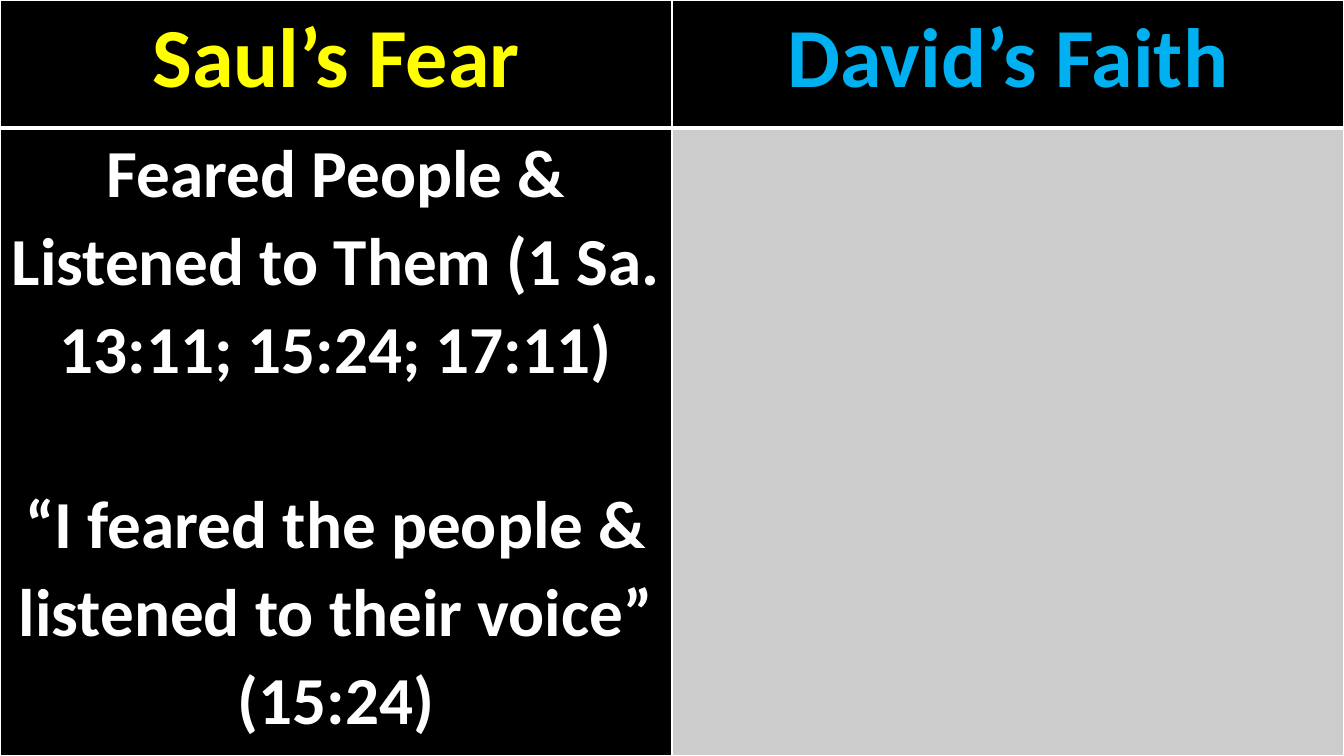
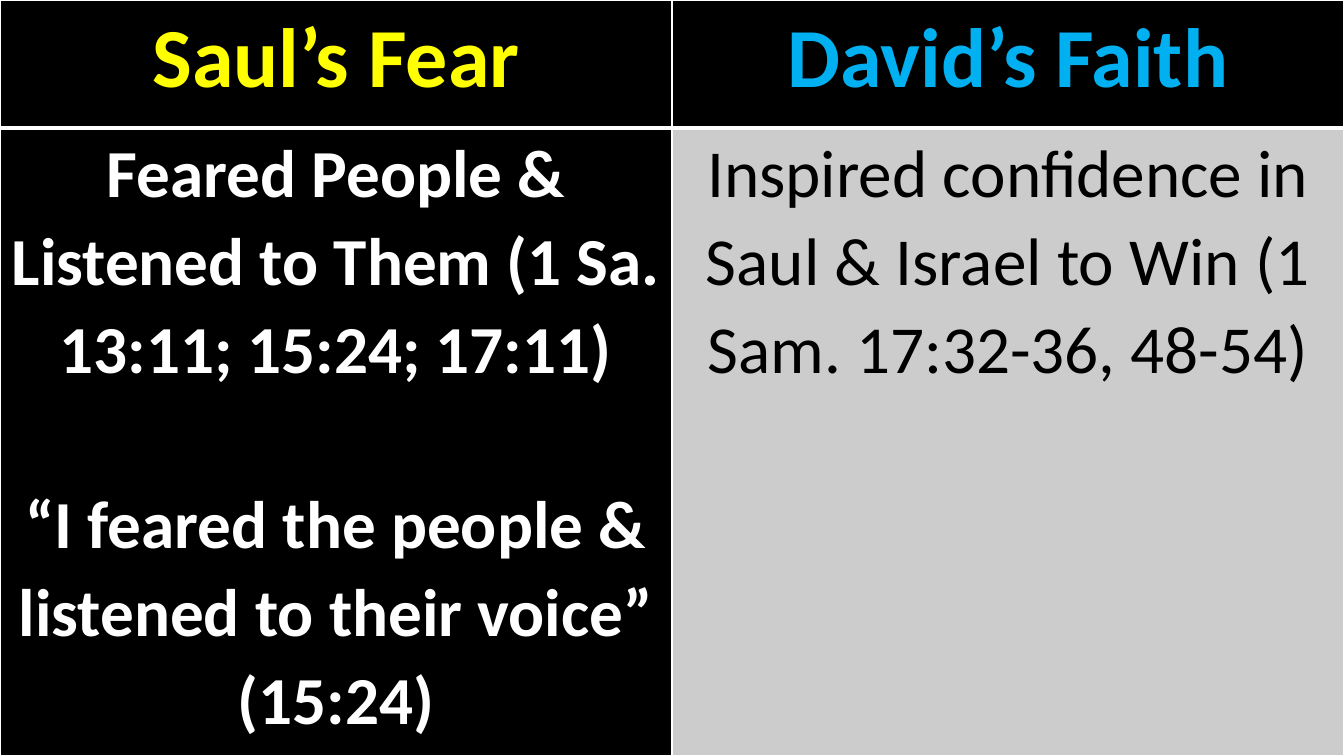
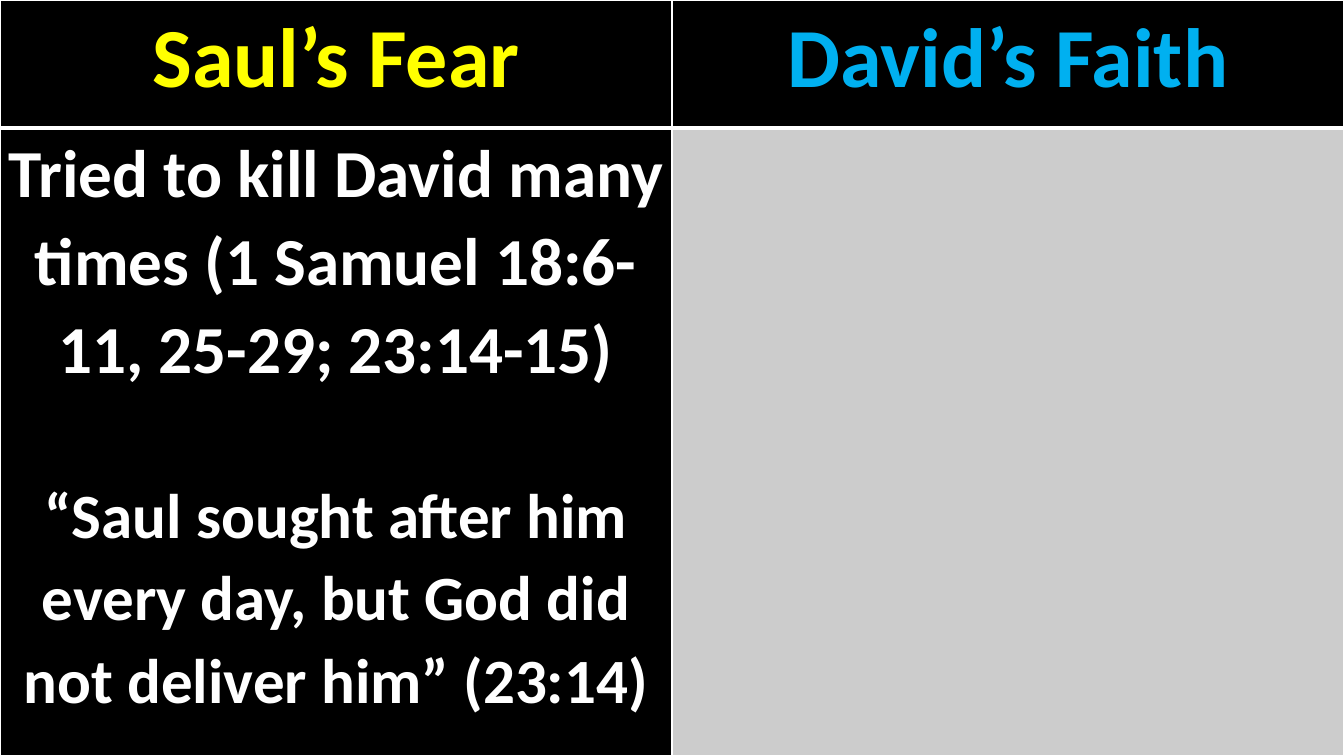
from lxml.etree import SubElement
from pptx import Presentation
from pptx.dml.color import RGBColor
from pptx.enum.text import PP_ALIGN
from pptx.oxml.ns import qn
from pptx.util import Inches, Pt

BLACK = "000000"
WHITE = "FFFFFF"
GREY = "CCCCCC"
YELLOW = "FFFF00"
BLUE = "00B0F0"

FONT = "Calibri"
LINE_SPACING = 1.07
LINE_HEIGHT = 1.22 * LINE_SPACING
SLIDE_WIDTH = 13.33
ROW_HEIGHTS = (1.27, 6.23)
HEADINGS = (("Saul’s Fear", YELLOW), ("David’s Faith", BLUE))
HEADING_BORDERS = {"lnL": 1, "lnR": 1, "lnT": 1, "lnB": 3}
BODY_BORDERS = {"lnL": 1, "lnR": 1, "lnT": 1, "lnB": 1}

FEARED_PEOPLE = (
    "Feared People & Listened to Them (1 Sa. 13:11; 15:24; 17:11)",
    "“I feared the people & listened to their voice” (15:24)",
)
TRIED_TO_KILL = (
    "Tried to kill David many times (1 Samuel 18:6-11, 25-29; 23:14-15)",
    "“Saul sought after him every day, but God did not deliver him” (23:14)",
)
INSPIRED = "Inspired confidence in Saul & Israel to Win (1 Sam. 17:32-36, 48-54)"

COMPARISONS = (
    {"fear": FEARED_PEOPLE},
    {"fear": FEARED_PEOPLE, "faith": INSPIRED},
    {"fear": TRIED_TO_KILL, "quote_size": 45},
)


def color(hex_string):
    return RGBColor.from_string(hex_string)


def write_text(paragraph, text, size=48, text_color=WHITE, bold=True, lines_before=0):
    paragraph.alignment = PP_ALIGN.CENTER
    paragraph.line_spacing = LINE_SPACING
    if lines_before:
        paragraph.space_before = Pt(round(lines_before * size * LINE_HEIGHT, 1))
    run = paragraph.add_run()
    run.text = text
    run.font.name = FONT
    run.font.size = Pt(size)
    run.font.bold = bold
    run.font.color.rgb = color(text_color)


def style_cell(cell, fill, borders):
    cell.margin_left = cell.margin_right = Inches(0.07)
    cell.margin_top = cell.margin_bottom = 0
    properties = cell._tc.get_or_add_tcPr()
    for edge, width in borders.items():
        line = SubElement(properties, qn(f"a:{edge}"), w=str(Pt(width)))
        line_fill = SubElement(line, qn("a:solidFill"))
        SubElement(line_fill, qn("a:srgbClr"), val=WHITE)
    cell.fill.solid()
    cell.fill.fore_color.rgb = color(fill)


def add_comparison_table(slide):
    table = slide.shapes.add_table(
        2, 2, 0, 0, Inches(SLIDE_WIDTH), Inches(sum(ROW_HEIGHTS))
    ).table
    table.horz_banding = False
    for row, height in zip(table.rows, ROW_HEIGHTS):
        row.height = Inches(height)
    for column, (heading, heading_color) in enumerate(HEADINGS):
        cell = table.cell(0, column)
        style_cell(cell, BLACK, HEADING_BORDERS)
        write_text(cell.text_frame.paragraphs[0], heading, size=60, text_color=heading_color)
    for column, fill in enumerate((BLACK, GREY)):
        style_cell(table.cell(1, column), fill, BODY_BORDERS)
    return table


def add_comparison_slide(presentation, fear, faith=None, quote_size=48):
    slide = presentation.slides.add_slide(presentation.slide_layouts[6])
    slide.background.fill.solid()
    slide.background.fill.fore_color.rgb = color(BLACK)
    table = add_comparison_table(slide)
    statement, quote = fear
    fear_frame = table.cell(1, 0).text_frame
    write_text(fear_frame.paragraphs[0], statement)
    write_text(fear_frame.add_paragraph(), quote, size=quote_size, lines_before=1)
    if faith:
        faith_frame = table.cell(1, 1).text_frame
        write_text(faith_frame.paragraphs[0], faith, text_color=BLACK, bold=False)


def main():
    presentation = Presentation()
    presentation.slide_width = Inches(SLIDE_WIDTH)
    presentation.slide_height = Inches(7.5)
    for comparison in COMPARISONS:
        add_comparison_slide(presentation, **comparison)
    presentation.save("out.pptx")


if __name__ == "__main__":
    main()
